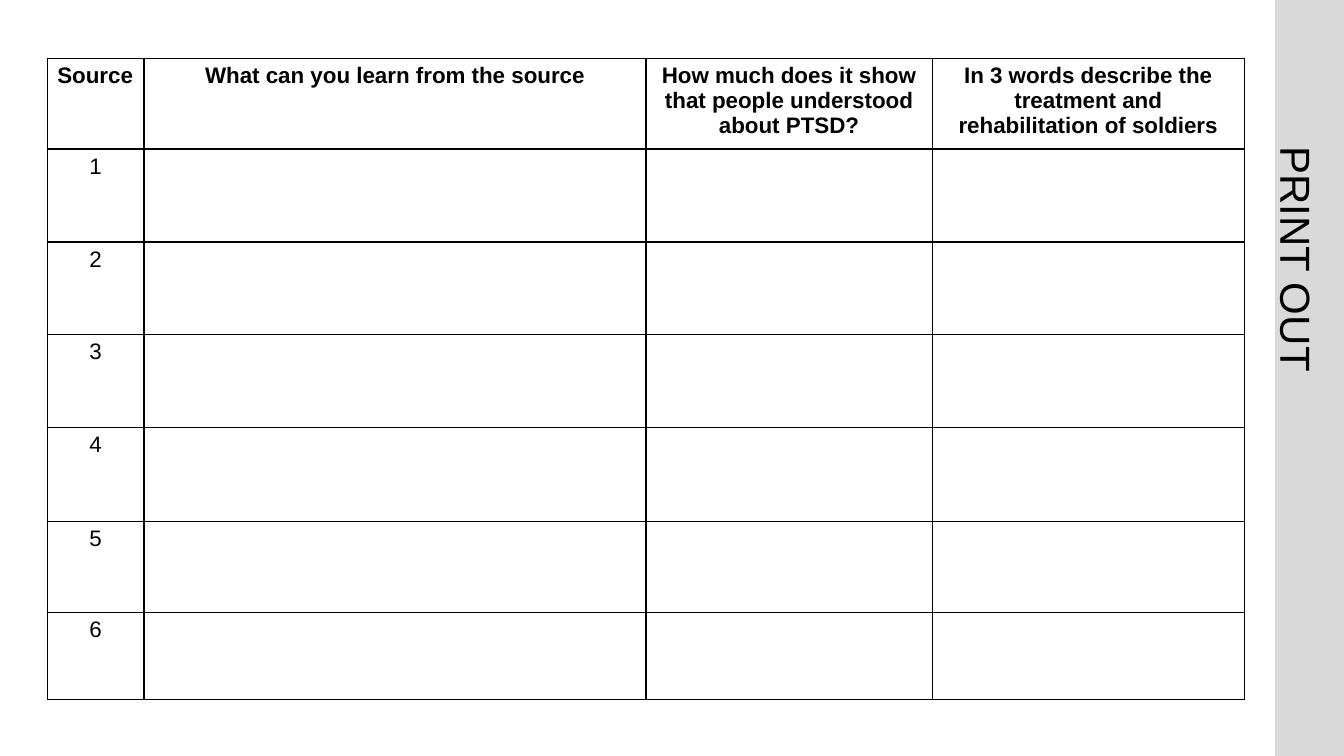
from pptx import Presentation
from pptx.dml.color import RGBColor as RGB
from pptx.enum.shapes import MSO_SHAPE as SHAPE
from pptx.enum.text import PP_ALIGN as ALIGN
from pptx.oxml import parse_xml
from pptx.oxml.ns import nsdecls
from pptx.util import Cm, Pt

COLORS = {"ink": "000000", "bar": "D9D9D9"}
WIDTH, HEIGHT = 33.87, 19.05

# Table content and sizes in cm
HEADERS = [
    "Source",
    "What can you learn from the source",
    "How much does it show that people understood about PTSD?",
    "In 3 words describe the treatment and rehabilitation of soldiers",
]
COL_WIDTHS = [2.44, 12.65, 7.21, 7.87]
ROW_HEIGHTS = [2.27, 2.34, 2.34, 2.34, 2.36, 2.29, 2.21]


class SlideBuilder:
    def __init__(self, s, font="Arial"):
        self.s = s
        self.font = font

    def add_text(self, tf, text, size, bold=False, align=ALIGN.CENTER):
        p = tf.paragraphs[0]
        p.alignment = align
        r = p.add_run()
        r.text = text
        style = {"name": self.font, "size": Pt(size), "bold": bold}
        for key, value in style.items():
            setattr(r.font, key, value)
        r.font.color.rgb = RGB.from_string(COLORS["ink"])
        return p

    def bar(self, x, y, w, h):
        sp = self.s.shapes.add_shape(SHAPE.RECTANGLE, Cm(x), Cm(y), Cm(w), Cm(h))
        sp.shadow.inherit = False
        sp.fill.solid()
        sp.fill.fore_color.rgb = RGB.from_string(COLORS["bar"])
        sp.line.fill.background()

    def side_label(self, text, x, y, w, h, size, spacing):
        sp = self.s.shapes.add_textbox(Cm(x), Cm(y), Cm(w), Cm(h))
        sp.rotation = 90
        tf = sp.text_frame
        frame = {"word_wrap": True, "margin_left": 0, "margin_right": 0,
                 "margin_top": 0, "margin_bottom": 0}
        for key, value in frame.items():
            setattr(tf, key, value)
        self.add_text(tf, text, size).line_spacing = Pt(spacing)

    def border(self, cell, width=1):
        tc_pr = cell._tc.get_or_add_tcPr()
        for i, side in enumerate(("lnL", "lnR", "lnT", "lnB")):
            tc_pr.insert(i, parse_xml(
                f'<a:{side} {nsdecls("a")} w="{Pt(width)}"><a:solidFill>'
                f'<a:srgbClr val="{COLORS["ink"]}"/></a:solidFill></a:{side}>'))

    def table(self, x, y, widths, heights, headers, size):
        table = self.s.shapes.add_table(
            len(heights), len(widths), Cm(x), Cm(y),
            Cm(sum(widths)), Cm(sum(heights))).table
        table.first_row = table.horz_banding = False
        for col, width in zip(table.columns, widths):
            col.width = Cm(width)
        for row, height in zip(table.rows, heights):
            row.height = Cm(height)
        for cell in table.iter_cells():
            cell.fill.background()
            self.border(cell)
        for c, text in enumerate(headers):
            align = ALIGN.CENTER if c else ALIGN.LEFT
            self.add_text(table.cell(0, c).text_frame, text, size, True, align)
        for n in range(1, len(heights)):
            self.add_text(table.cell(n, 0).text_frame, str(n), size)


def main():
    prs = Presentation()
    prs.slide_width, prs.slide_height = Cm(WIDTH), Cm(HEIGHT)
    slide = SlideBuilder(prs.slides.add_slide(prs.slide_layouts[6]))

    # Side bar with its turned label
    slide.bar(32.13, 0, WIDTH - 32.13, HEIGHT)
    slide.side_label("PRINT OUT", 28.12, 5.61, 10.19, 1.83, 30, 58.8)

    # Worksheet table
    slide.table(1.19, 1.47, COL_WIDTHS, ROW_HEIGHTS, HEADERS, 16)

    prs.save("out.pptx")


if __name__ == "__main__":
    main()
